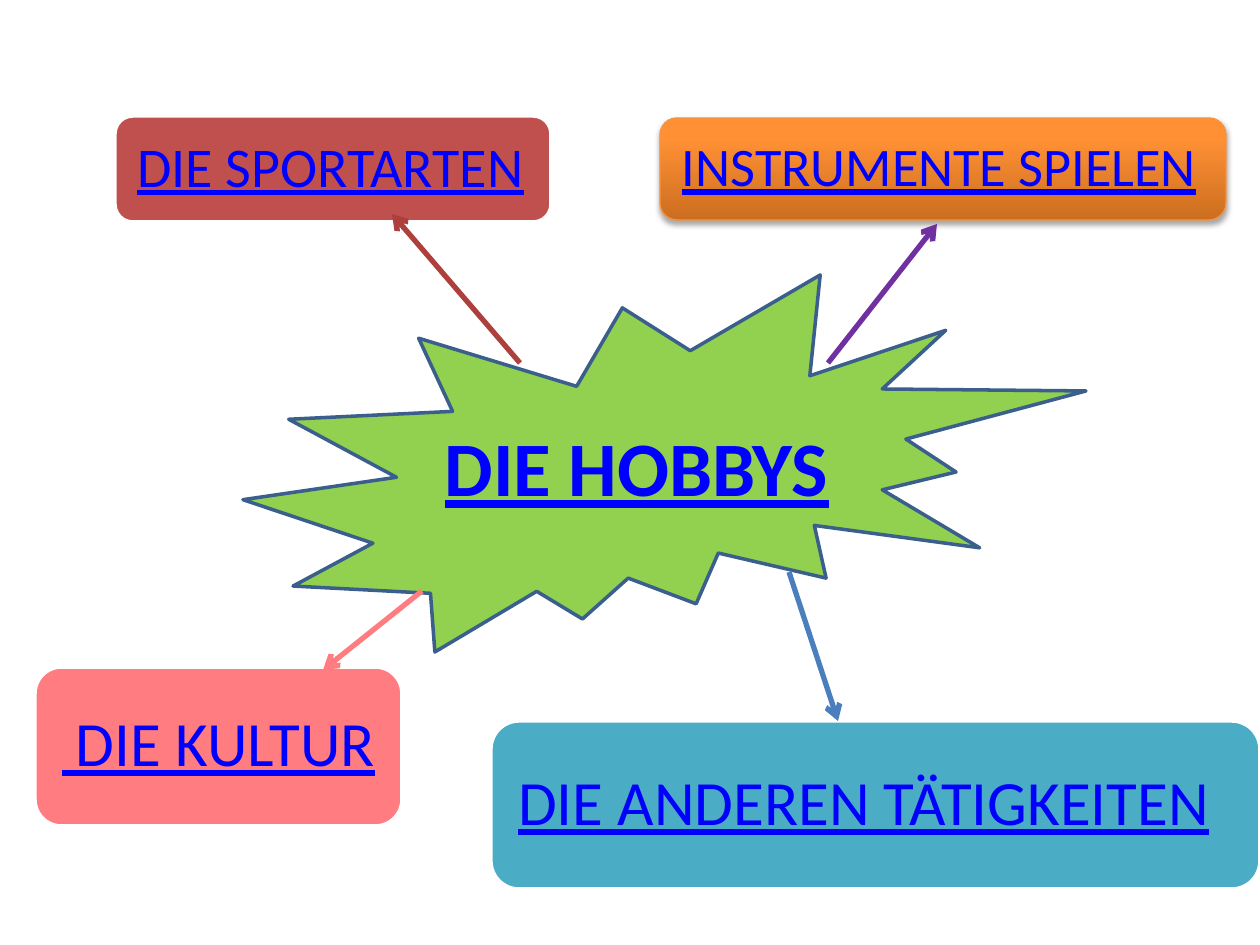
from copy import deepcopy
from dataclasses import dataclass

from lxml import etree
from pptx import Presentation
from pptx.dml.color import RGBColor
from pptx.enum.shapes import MSO_CONNECTOR, MSO_SHAPE
from pptx.enum.text import MSO_ANCHOR, MSO_AUTO_SIZE, PP_ALIGN
from pptx.oxml.ns import qn
from pptx.util import Pt

PX = 914400 / 126
STAR, ROUNDED = MSO_SHAPE.EXPLOSION2, MSO_SHAPE.ROUNDED_RECTANGLE
STRAIGHT = MSO_CONNECTOR.STRAIGHT
LEFT = PP_ALIGN.LEFT
TOP, MIDDLE = MSO_ANCHOR.TOP, MSO_ANCHOR.MIDDLE
NO_FIT = MSO_AUTO_SIZE.NONE


@dataclass(frozen=True)
class Theme:
    font: str = "Calibri"
    text: str = "0000FF"
    white: str = "FFFFFF"
    green: str = "92D050"
    outline: str = "3A5F8C"
    red: str = "C0504D"
    dark_red: str = "AD403D"
    orange: str = "F69240"
    orange_stops: tuple = ((0, "CC6E20"), (0.8, "FF9034"), (1, "FF9136"))
    purple: str = "7030A0"
    pink: str = "FF7C80"
    teal: str = "4BACC6"
    blue: str = "4B7EBC"
    title_size: int = 44
    large: int = 36
    medium: int = 32
    small: int = 31


def px(*values):
    return [round(v * PX) for v in values]


def rgb(value):
    return RGBColor.from_string(value)


class MindMap:
    def __init__(self, prs, theme):
        self.theme = theme
        self.slide = prs.slides.add_slide(prs.slide_layouts[5])

    def set_text(self, shape, text, size, bold=False, anchor=MIDDLE):
        tf = shape.text_frame
        tf.text = text
        tf.word_wrap = True
        tf.auto_size = NO_FIT
        tf.vertical_anchor = anchor
        p = tf.paragraphs[0]
        p.alignment = LEFT
        font = p.runs[0].font
        font.name, font.size = self.theme.font, Pt(size)
        font.bold, font.underline = bold, True
        font.color.rgb = rgb(self.theme.text)
        return p

    def shape(self, kind, box, fill, line, width=2):
        sp = self.slide.shapes.add_shape(kind, *px(*box))
        sp.shadow.inherit = False
        if isinstance(fill, tuple):
            self.gradient(sp, fill)
        else:
            sp.fill.solid()
            sp.fill.fore_color.rgb = rgb(fill)
        sp.line.color.rgb = rgb(line)
        sp.line.width = Pt(width)
        return sp

    def gradient(self, sp, stops):
        """Fill from bottom to top with any number of stops."""
        sp.fill.gradient()
        sp.fill.gradient_angle = 90
        gs_list = sp.element.spPr.find(qn("a:gradFill")).find(qn("a:gsLst"))
        while len(gs_list) < len(stops):
            gs_list.append(deepcopy(gs_list[0]))
        for stop, (position, color) in zip(sp.fill.gradient_stops, stops):
            stop.position = position
            stop.color.rgb = rgb(color)

    def shadow(self, sp):
        effects = sp.element.spPr.find(qn("a:effectLst"))
        outer = etree.SubElement(effects, qn("a:outerShdw"), blurRad="40000",
                                 dist="23000", dir="5400000", rotWithShape="0")
        color = etree.SubElement(outer, qn("a:srgbClr"), val="000000")
        etree.SubElement(color, qn("a:alpha"), val="35000")

    def label(self, text, box, fill, size, inset, line, width=2):
        sp = self.shape(ROUNDED, box, fill, line, width)
        self.set_text(sp, text, size).line_spacing = 0.9
        tf = sp.text_frame
        tf.margin_left, tf.margin_top, tf.margin_right, tf.margin_bottom = px(*[inset] * 4)
        return sp

    def title(self, text, box):
        sp = self.slide.shapes.title
        sp.left, sp.top, sp.width, sp.height = px(*box)
        self.set_text(sp, text, self.theme.title_size, bold=True, anchor=TOP)
        # Bring the title in front of the star
        sp.element.getparent().append(sp.element)

    def arrow(self, start, end, color):
        cxn = self.slide.shapes.add_connector(STRAIGHT, *px(*start, *end))
        cxn.line.color.rgb = rgb(color)
        cxn.line.width = Pt(3)
        sp_pr = cxn.element.spPr
        etree.SubElement(sp_pr.find(qn("a:ln")), qn("a:tailEnd"), type="arrow")
        etree.SubElement(sp_pr, qn("a:effectLst"))


def main():
    prs = Presentation()
    prs.slide_width, prs.slide_height = px(1260, 945)
    t = Theme()
    m = MindMap(prs, t)

    # Central topic
    m.shape(STAR, (243, 275, 843, 377), t.green, t.outline)
    m.title("DIE HOBBYS", (432, 413, 507, 106))

    # Branches
    m.label("DIE SPORTARTEN", (115, 116, 436, 106), t.red, t.medium, 17, t.white)
    instruments = m.label("INSTRUMENTE SPIELEN", (660, 118, 566, 102),
                          t.orange_stops, t.small, 17, t.orange, 0.75)
    m.shadow(instruments)
    m.label(" DIE KULTUR", (35, 667, 367, 159), t.pink, t.large, 19, t.white)
    m.label("DIE ANDEREN TÄTIGKEITEN", (491, 721, 769, 168), t.teal, t.large, 19, t.white)

    # Arrows from the topic to the branches
    for start, end, color in (
        ((520, 363), (392, 214), t.dark_red),
        ((828, 363), (937, 224), t.purple),
        ((422, 591), (323, 670), t.pink),
        ((789, 572), (838, 721), t.blue),
    ):
        m.arrow(start, end, color)

    prs.save("out.pptx")


if __name__ == "__main__":
    main()
